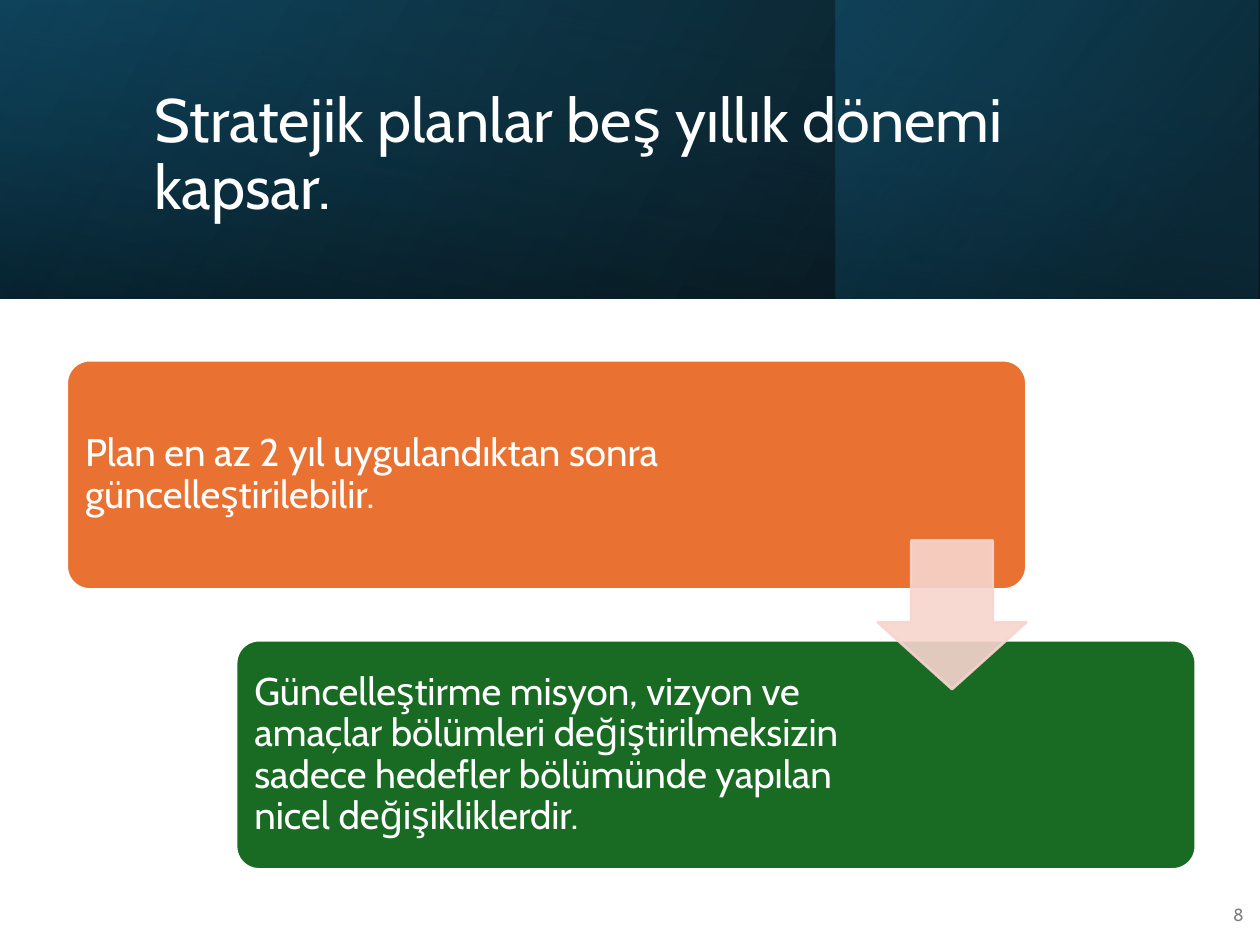
import pptx
import pptx.util
import pptx.dml.color
import pptx.enum.shapes
import pptx.enum.text
import pptx.oxml.ns
from lxml import etree

SHAPE = pptx.enum.shapes.MSO_SHAPE
ALIGN = pptx.enum.text.PP_ALIGN
WIDTH, HEIGHT = pptx.util.Inches(10), pptx.util.Inches(7.5)
COL, ROW = WIDTH / 100, HEIGHT / 100
FONT = "Cabin"
COLORS = {
    "white": "FFFFFF", "black": "000000", "navy": "104862", "deep": "0B3041",
    "teal": "156082", "orange": "E97132", "green": "196B24", "blush": "F7D5CE",
    "gray": "808080",
}


def rgb(name):
    return pptx.dml.color.RGBColor.from_string(COLORS[name])


def emu(box):
    x, y, w, h = box
    return [round(v) for v in (x * COL, y * ROW, w * COL, h * ROW)]


def set_alpha(sp, alphas):
    colors = sp.element.spPr.iter(pptx.oxml.ns.qn("a:srgbClr"))
    for color, alpha in zip(colors, alphas):
        etree.SubElement(color, pptx.oxml.ns.qn("a:alpha"), val=str(alpha * 1000))


def add_shape(slide, kind, box, fill=None, line=None):
    sp = slide.shapes.add_shape(kind, *emu(box))
    sp.shadow.inherit = False
    if fill:
        sp.fill.solid()
        sp.fill.fore_color.rgb = rgb(fill)
    if line:
        sp.line.color.rgb = rgb(line)
        sp.line.width = pptx.util.Pt(1.5)
    else:
        sp.line.fill.background()
    return sp


def add_gradient(slide, box, stops, angle):
    sp = add_shape(slide, SHAPE.RECTANGLE, box)
    sp.fill.gradient()
    sp.fill.gradient_angle = angle
    for stop, (position, color, _) in zip(sp.fill.gradient_stops, stops):
        stop.position = position
        stop.color.rgb = rgb(color)
    set_alpha(sp, [alpha for _, _, alpha in stops])


def add_text(slide, box, text, size, color="white", align=ALIGN.LEFT, spacing=0.9, inset=None):
    tf = slide.shapes.add_textbox(*emu(box)).text_frame
    tf.word_wrap = True
    tf.vertical_anchor = pptx.enum.text.MSO_ANCHOR.MIDDLE
    if inset:
        tf.margin_left = tf.margin_right = pptx.util.Inches(inset)
        tf.margin_top = tf.margin_bottom = pptx.util.Inches(inset)
    p = tf.paragraphs[0]
    p.text = text
    p.alignment = align
    p.line_spacing = spacing
    p.font.name = FONT
    p.font.size = pptx.util.Pt(size)
    p.font.color.rgb = rgb(color)


def add_header(slide, box, title):
    x, y, w, h = box
    add_gradient(slide, box, [(0, "black", 96), (1, "navy", 100)], 150)
    add_gradient(slide, (x + 0.663 * w, y, 0.336 * w, h),
                 [(0.19, "deep", 68), (1, "teal", 48)], 140)
    add_gradient(slide, box, [(0.23, "navy", 16), (0.99, "black", 45)], 260)
    add_text(slide, (x + 0.113 * w, y + 0.16 * h, 0.797 * w, 0.726 * h), title, 35)


def add_card(slide, box, fill, text, text_width):
    x, y, w, h = box
    sp = add_shape(slide, SHAPE.ROUNDED_RECTANGLE, box, fill, "white")
    sp.adjustments[0] = 0.1
    add_text(slide, (x + 0.55, y + 0.03 * h, text_width * w, 0.94 * h), text, 22, inset=0.09)


def add_steps(slide, box, steps):
    x, y, w, h = box
    card_w, card_h = 0.85 * w, 0.45 * h
    for i, (fill, text, text_width) in enumerate(steps):
        card = (x + i * (w - card_w), y + i * (h - card_h), card_w, card_h)
        add_card(slide, card, fill, text, text_width)
    arrow_w, arrow_h = 11.8, 11.8 * COL / ROW
    arrow = (x + card_w - arrow_w, y + (h - arrow_h) / 2, arrow_w, arrow_h)
    sp = add_shape(slide, SHAPE.DOWN_ARROW, arrow, "blush", "blush")
    sp.adjustments[0], sp.adjustments[1] = 0.55, 0.45
    set_alpha(sp, [90, 90])


def main():
    prs = pptx.Presentation()
    prs.slide_width, prs.slide_height = WIDTH, HEIGHT
    slide = prs.slides.add_slide(prs.slide_layouts[6])
    add_header(slide, (0, 0, 100, 31.6), "Stratejik planlar beş yıllık dönemi kapsar.")
    add_text(slide, (96, 94.13, 3.7, 5.33), "8", 10, "gray", ALIGN.RIGHT, 1)
    add_steps(slide, (5.3, 38.13, 89.6, 53.87), [
        ("orange", "Plan en az 2 yıl uygulandıktan sonra güncelleştirilebilir.", 0.75),
        ("green", "Güncelleştirme misyon, vizyon ve amaçlar bölümleri değiştirilmeksizin "
                  "sadece hedefler bölümünde yapılan nicel değişikliklerdir.", 0.65),
    ])
    prs.save("out.pptx")


if __name__ == "__main__":
    main()
